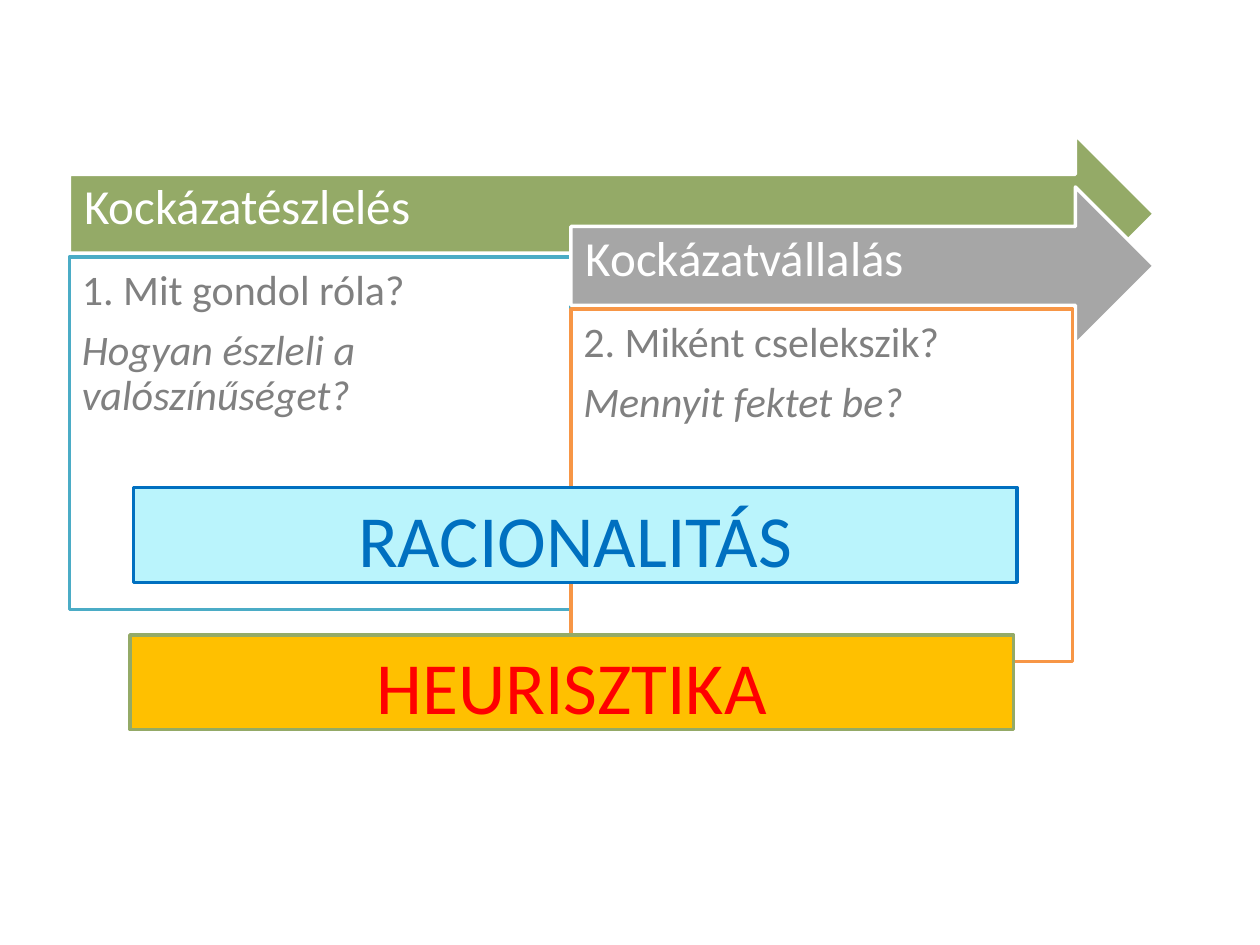
from dataclasses import dataclass

from pptx import Presentation
from pptx.dml.color import RGBColor
from pptx.enum.shapes import MSO_SHAPE
from pptx.enum.text import MSO_ANCHOR, PP_ALIGN
from pptx.util import Cm, Pt


@dataclass(frozen=True)
class Theme:
    font: str = "Calibri"
    heading_size: int = 28
    body_size: int = 24
    banner_size: int = 42
    line_width: int = 2
    white: str = "FFFFFF"
    text_grey: str = "808080"
    green: str = "94AA67"
    grey: str = "A6A6A6"
    teal: str = "4BACC6"
    orange: str = "F79646"
    blue: str = "0070C0"
    pale_blue: str = "BAF4FC"
    amber: str = "FFC000"
    red: str = "FF0000"


class SlideBuilder:
    def __init__(self, slide, theme):
        self.slide = slide
        self.theme = theme

    def _box(self, preset, bounds, fill, line, insets):
        box = self.slide.shapes.add_shape(preset, *map(Cm, bounds))
        box.shadow.inherit = False
        box.fill.solid()
        box.fill.fore_color.rgb = RGBColor.from_string(fill)
        box.line.color.rgb = RGBColor.from_string(line)
        box.line.width = Pt(self.theme.line_width)
        frame = box.text_frame
        frame.word_wrap = True
        frame.vertical_anchor = MSO_ANCHOR.TOP
        (frame.margin_left, frame.margin_top,
         frame.margin_right, frame.margin_bottom) = map(Cm, insets)
        return frame

    def _write(self, frame, text, size, color, align=PP_ALIGN.LEFT):
        frame.text = text
        for paragraph in frame.paragraphs:
            paragraph.alignment = align
            for run in paragraph.runs:
                run.font.name = self.theme.font
                run.font.size = Pt(size)
                run.font.color.rgb = RGBColor.from_string(color)

    def _tighten(self, frame, size):
        for paragraph in frame.paragraphs:
            paragraph.line_spacing = 0.9
            paragraph.space_after = Pt(round(0.35 * size, 1))

    def arrow(self, bounds, heading, fill):
        t = self.theme
        frame = self._box(MSO_SHAPE.RIGHT_ARROW, bounds, fill, t.white,
                          (0.3, 0.3, 0.71, 0.5))
        frame.vertical_anchor = MSO_ANCHOR.MIDDLE
        self._write(frame, heading, t.heading_size, t.white)
        self._tighten(frame, t.heading_size)

    def panel(self, bounds, topic, question, line):
        t = self.theme
        frame = self._box(MSO_SHAPE.RECTANGLE, bounds, t.white, line, (0.25,) * 4)
        self._write(frame, f"{topic}\n{question}", t.body_size, t.text_grey)
        self._tighten(frame, t.body_size)
        frame.paragraphs[1].runs[0].font.italic = True

    def banner(self, bounds, label, fill, line, color):
        frame = self._box(MSO_SHAPE.RECTANGLE, bounds, fill, line,
                          (0.25, 0.13, 0.25, 0.13))
        self._write(frame, label, self.theme.banner_size, color, PP_ALIGN.CENTER)


def main():
    theme = Theme()
    deck = Presentation()
    deck.slide_width, deck.slide_height = Cm(25.4), Cm(19.05)
    builder = SlideBuilder(deck.slides.add_slide(deck.slide_layouts[6]), theme)

    # Two stages, each a step right and down; both arrows end at the same edge
    stages = [
        ("Kockázatészlelés", theme.green, "1. Mit gondol róla?",
         "Hogyan észleli a valószínűséget?", theme.teal),
        ("Kockázatvállalás", theme.grey, "2. Miként cselekszik?",
         "Mennyit fektet be?", theme.orange),
    ]
    panel_width, arrow_end = 10.11, 23.27
    for index, (heading, fill, topic, question, line) in enumerate(stages):
        left = 1.4 + index * panel_width
        top = 2.72 + index * 1.05
        builder.arrow((left, top, arrow_end - left, 3.18), heading, fill)
        builder.panel((left, top + 2.46, panel_width, 7.11), topic, question, line)

    # Banners across both stages
    banner_size = (17.81, 1.91)
    builder.banner((2.69, 9.83, *banner_size), "RACIONALITÁS",
                   theme.pale_blue, theme.blue, theme.blue)
    builder.banner((2.62, 12.8, *banner_size), "HEURISZTIKA",
                   theme.amber, theme.green, theme.red)

    deck.save("out.pptx")


if __name__ == "__main__":
    main()
